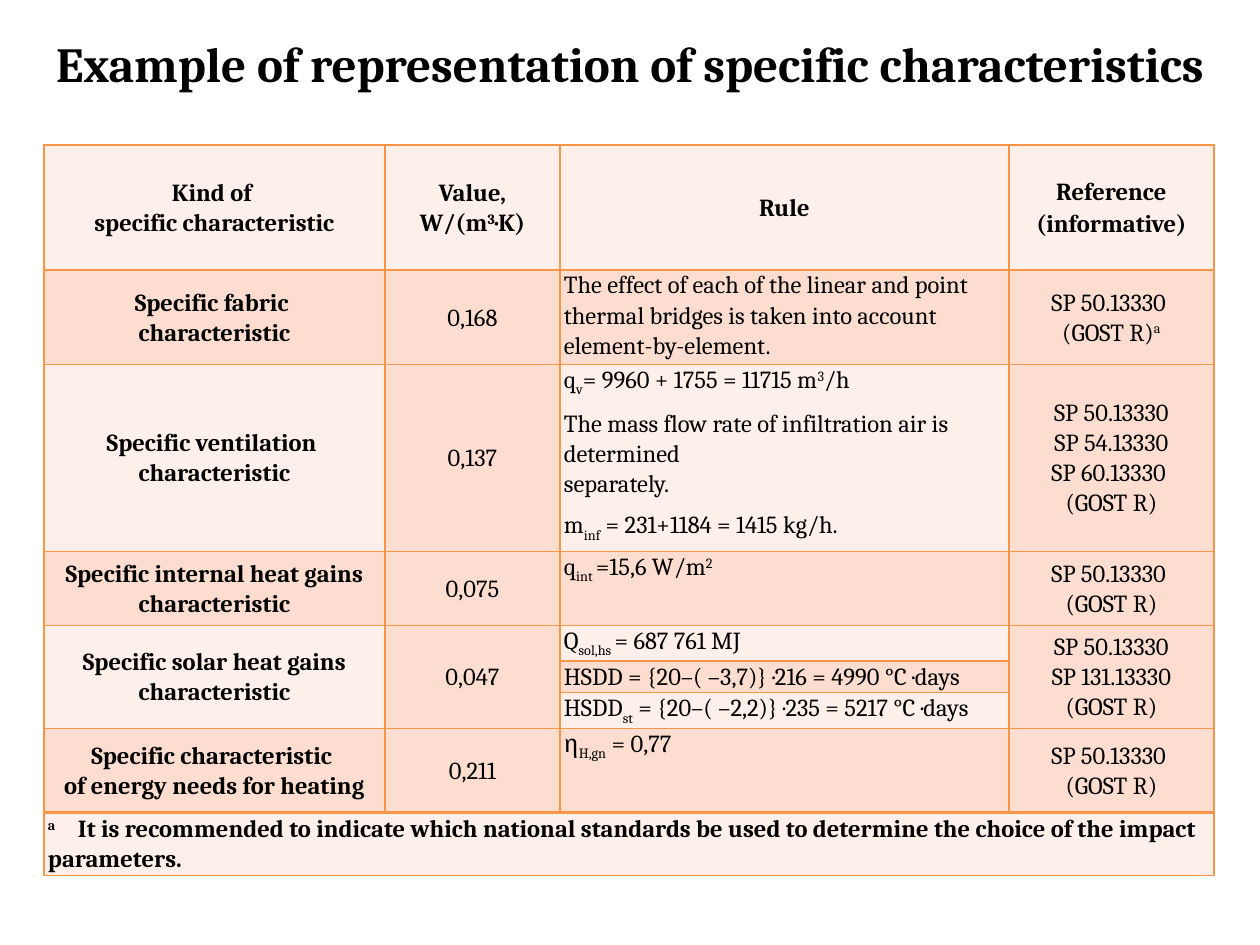
from dataclasses import dataclass
from lxml import etree
from pptx import Presentation, util as u
from pptx.dml.color import RGBColor
from pptx.enum import text as t
from pptx.oxml.ns import qn


@dataclass
class Theme:
    font: str = "Cambria"
    ink: str = "000000"
    light: str = "FDEFE9"
    dark: str = "FCDDCF"
    edge: str = "F79646"
    title: int = 28
    body: int = 14


LOOK = Theme()
COLS = [341, 175, 449, 205]
HEADS = [125, 90, 180, 74, 34, 30, 34, 84, 61]
LAST = len(HEADS) - 1
SHIFT = {"_": "-25000", "^": "30000"}

# A cell is a list of paragraphs; |_x| is subscript and |^x| superscript.
ROWS = [
    [["Kind of \nspecific characteristic"], ["Value, W/(m|^3|·K)"],
     ["Rule"], ["Reference", "(informative)"]],
    [["Specific fabric \ncharacteristic"], ["0,168"],
     ["The effect of each of the linear and point thermal bridges "
      "is taken into account element-by-element."],
     ["SP 50.13330 \n(GOST R)|^a"]],
    [["Specific ventilation \ncharacteristic"], ["0,137"],
     ["q|_v|= 9960 + 1755 = 11715 m|^3|/h",
      "The mass flow rate of infiltration air is determined \nseparately.",
      "m|_inf| = 231+1184 = 1415 kg/h."],
     ["SP 50.13330\nSP 54.13330\nSP 60.13330 \n(GOST R)"]],
    [["Specific internal heat gains characteristic"], ["0,075"],
     ["q|_int |=15,6 W/m|^2"], ["SP 50.13330 \n(GOST R)"]],
    [["Specific solar heat gains characteristic"], ["0,047"],
     ["Q|_sol,hs |= 687 761 MJ"],
     ["SP 50.13330\nSP 131.13330\n(GOST R)"]],
    [[], [], ["HSDD = {20–( –3,7)} ·216 = 4990 °C ·days"], []],
    [[], [], ["HSDD|_st| = {20–( –2,2)} ·235 = 5217 °C ·days"], []],
    [["Specific characteristic \nof energy needs for heating"], ["0,211"],
     ["η|_H,gn| = 0,77"], ["SP 50.13330 \n(GOST R)"]],
    [["|^a|\tIt is recommended to indicate which national standards be used "
      "to determine the choice of the impact parameters."], [], [], []],
]


def px(n):
    return u.Emu(round(n * 914400 / 126))


def write(para, text, size=LOOK.body, bold=False, left=False, space=None):
    """Fill a paragraph, reading the shift marks and line breaks in text."""
    para.alignment = t.PP_ALIGN.LEFT if left else t.PP_ALIGN.CENTER
    if space:
        para.line_spacing = space
        para.space_before = para.space_after = u.Pt(3)
    for part in filter(None, text.split("|")):
        shift = SHIFT.get(part[0])
        for i, line in enumerate((part[1:] if shift else part).split("\n")):
            if i:
                para.add_line_break()
            run = para.add_run()
            run.text = line
            font = run.font
            font.name, font.size, font.bold = LOOK.font, u.Pt(size), bold
            font.color.rgb = RGBColor.from_string(LOOK.ink)
            if shift:
                font._element.set("baseline", shift)


def add_tab(para, pos):
    tabs = etree.SubElement(para._p.get_or_add_pPr(), qn("a:tabLst"))
    etree.SubElement(tabs, qn("a:tab"), pos=str(px(pos)), algn="l")


def edge(cell, row):
    """Draw the four borders; the rule above the footnote is heavier."""
    props = cell._tc.get_or_add_tcPr()
    for side in "LRTB":
        thick = (row, side) in ((LAST, "T"), (LAST - 1, "B"))
        line = etree.SubElement(props, qn("a:ln" + side),
                                w=str(u.Pt(2 if thick else 1)))
        fill = etree.SubElement(line, qn("a:solidFill"))
        etree.SubElement(fill, qn("a:srgbClr"), val=LOOK.edge)


def fill_cell(cell, row, col, paras):
    body = 0 < row < LAST
    rule = body and col == 2
    cell.margin_left = cell.margin_right = px(4)
    cell.margin_top = cell.margin_bottom = 0
    cell.vertical_anchor = t.MSO_ANCHOR.TOP if rule else t.MSO_ANCHOR.MIDDLE
    edge(cell, row)
    dark = row % 2 or (body and col in (1, 3))
    cell.fill.solid()
    cell.fill.fore_color.rgb = RGBColor.from_string(
        LOOK.dark if dark else LOOK.light)
    frame = cell.text_frame
    for i, text in enumerate(paras):
        para = frame.add_paragraph() if i else frame.paragraphs[0]
        write(para, text, bold=col == 0 or not body,
              left=rule or row == LAST,
              space=u.Pt(12) if row == 0 and i else 1.07)


def add_title(slide, text):
    box = slide.shapes.add_textbox(0, px(20), px(1260), px(86))
    frame = box.text_frame
    frame.word_wrap = True
    frame.vertical_anchor = t.MSO_ANCHOR.MIDDLE
    write(frame.paragraphs[0], text, size=LOOK.title, bold=True)


def add_grid(slide):
    grid = slide.shapes.add_table(len(HEADS), len(COLS), px(44), px(145),
                                  px(sum(COLS)), px(sum(HEADS))).table
    grid.first_row = grid.horz_banding = False
    for col, wide in zip(grid.columns, COLS):
        col.width = px(wide)
    for row, high in zip(grid.rows, HEADS):
        row.height = px(high)
    for r, row in enumerate(ROWS):
        for c, paras in enumerate(row):
            fill_cell(grid.cell(r, c), r, c, paras)
    for c in (0, 1, 3):
        grid.cell(4, c).merge(grid.cell(6, c))
    note = grid.cell(LAST, 0)
    note.merge(grid.cell(LAST, 3))
    add_tab(note.text_frame.paragraphs[0], 30)


def main():
    deck = Presentation()
    deck.slide_width, deck.slide_height = px(1260), px(945)
    slide = deck.slides.add_slide(deck.slide_layouts[6])
    add_title(slide, "Example of representation of specific characteristics")
    add_grid(slide)
    deck.save("out.pptx")


if __name__ == "__main__":
    main()
